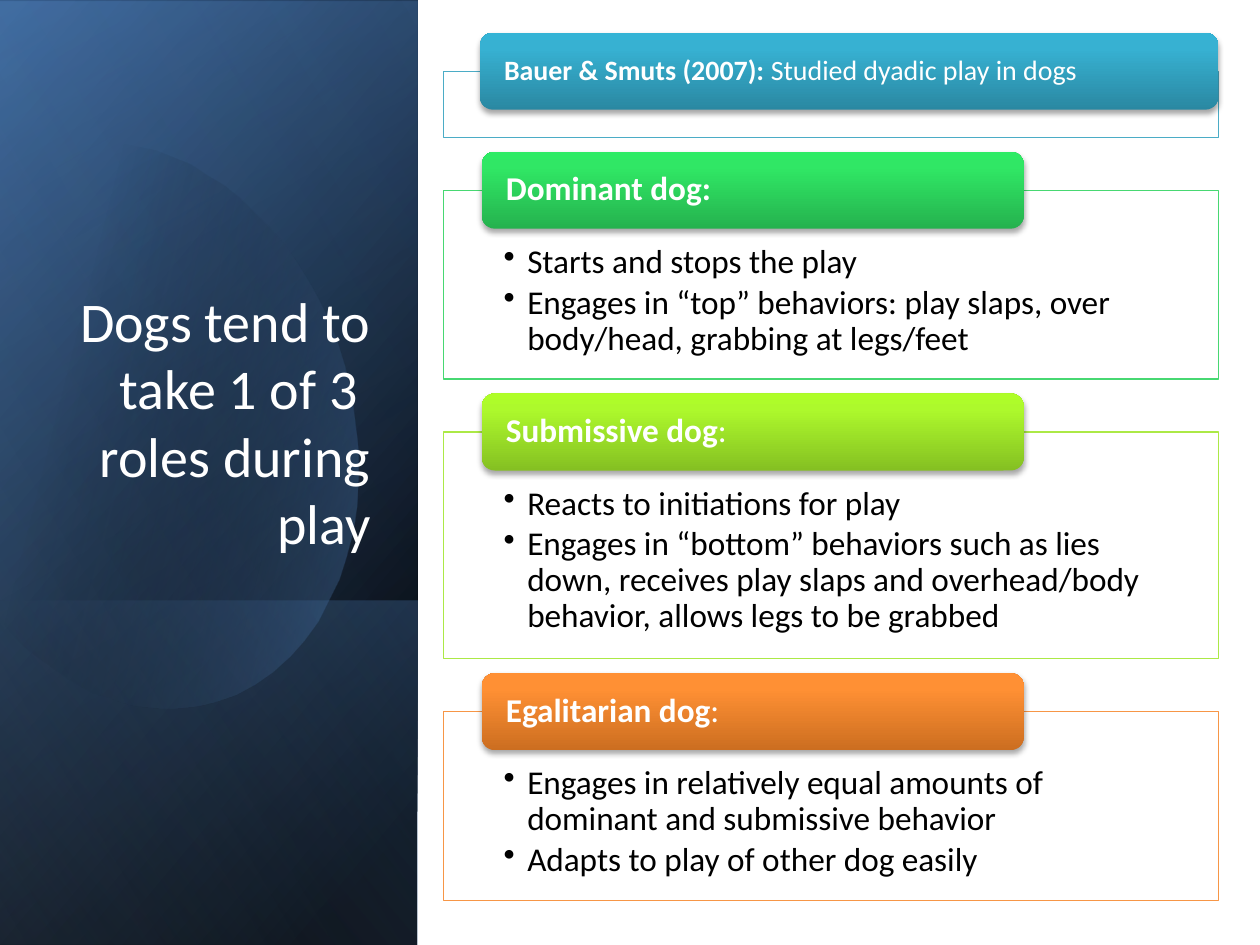
from lxml import etree
from pptx import Presentation
from pptx.dml.color import RGBColor
from pptx.enum.shapes import MSO_SHAPE
from pptx.enum.text import MSO_ANCHOR, MSO_AUTO_SIZE, PP_ALIGN
from pptx.oxml.ns import qn
from pptx.util import Pt

RECTANGLE, ROUNDED = MSO_SHAPE.RECTANGLE, MSO_SHAPE.ROUNDED_RECTANGLE
TOP, MIDDLE, BOTTOM = MSO_ANCHOR.TOP, MSO_ANCHOR.MIDDLE, MSO_ANCHOR.BOTTOM
LEFT, RIGHT = PP_ALIGN.LEFT, PP_ALIGN.RIGHT
FIXED_SIZE = MSO_AUTO_SIZE.NONE

COLORS = {
    "white": "FFFFFF", "black": "000000", "navy": "376092",
    "blue": "4F81BD", "pale": "95B3D7",
    "teal": "4BACC6", "green": "47D872", "lime": "ACE946", "orange": "F79646",
}
# Header gradients, from bottom to top
HEADER_STOPS = {
    "teal": [(0, "2A88A2"), (80, "37B1D2"), (100, "34B4D6")],
    "green": [(0, "25B24E"), (80, "30E765"), (100, "2DEB64")],
    "lime": [(0, "85C022"), (80, "ADF92C"), (100, "AFFE28")],
    "orange": [(0, "CC6E20"), (80, "FF9034"), (100, "FF9136")],
}


def bezier(start, control1, control2, end, steps=16):
    """Points along a cubic curve, without its start."""
    points = []
    for step in range(1, steps + 1):
        t = step / steps
        weights = ((1 - t) ** 3, 3 * t * (1 - t) ** 2, 3 * t * t * (1 - t), t ** 3)
        corners = (start, control1, control2, end)
        points.append(tuple(sum(w * c[axis] for w, c in zip(weights, corners))
                            for axis in (0, 1)))
    return points


class SlideBuilder:
    font = "Calibri"

    def __init__(self, slide):
        self.slide = slide

    def color(self, parent, value, alpha=100):
        node = etree.SubElement(parent, qn("a:srgbClr"), val=value)
        if alpha < 100:
            etree.SubElement(node, qn("a:alpha"), val=str(alpha * 1000))

    def gradient(self, shape, stops, angle):
        shape.fill.gradient()
        gradient = shape._element.spPr.find(qn("a:gradFill"))
        stop_list = gradient.find(qn("a:gsLst"))
        for old_stop in list(stop_list):
            stop_list.remove(old_stop)
        for position, *color in stops:
            stop = etree.SubElement(stop_list, qn("a:gs"), pos=str(position * 1000))
            self.color(stop, *color)
        gradient.find(qn("a:lin")).set("ang", str(angle * 60000))

    def shape(self, kind, left, top, width, height):
        shape = self.slide.shapes.add_shape(kind, Pt(left), Pt(top), Pt(width), Pt(height))
        shape.shadow.inherit = False
        shape.line.fill.background()
        return shape

    def backdrop(self, top, height, stops, angle, width=238.5):
        """A mirrored rectangle turned a quarter, given by its visible bounds."""
        shape = self.shape(RECTANGLE, (width - height) / 2, top + (height - width) / 2,
                           height, width)
        shape.rotation = 90
        shape._element.spPr.find(qn("a:xfrm")).set("flipH", "1")
        self.gradient(shape, stops, angle)

    def outline_shape(self, points, stops, angle):
        builder = self.slide.shapes.build_freeform(*points[0], scale=Pt(1))
        builder.add_line_segments(points[1:], close=True)
        shape = builder.convert_to_shape()
        shape.shadow.inherit = False
        shape.line.fill.background()
        self.gradient(shape, stops, angle)

    def frame_text(self, shape, anchor, left, top, right, bottom):
        frame = shape.text_frame
        frame.word_wrap, frame.vertical_anchor = True, anchor
        frame.margin_left, frame.margin_top = Pt(left), Pt(top)
        frame.margin_right, frame.margin_bottom = Pt(right), Pt(bottom)
        return frame

    def run(self, paragraph, text, size, color, bold=None):
        run = paragraph.add_run()
        run.text = text
        run.font.name, run.font.size, run.font.bold = self.font, Pt(size), bold
        run.font.color.rgb = RGBColor.from_string(COLORS[color])

    def title(self, lines, left, top, width, height):
        title = self.slide.shapes.title
        title.left, title.top = Pt(left), Pt(top)
        title.width, title.height = Pt(width), Pt(height)
        frame = self.frame_text(title, BOTTOM, 7.2, 3.6, 7.2, 3.6)
        frame.auto_size = FIXED_SIZE
        paragraph = frame.paragraphs[0]
        paragraph.alignment = RIGHT
        for index, line in enumerate(lines):
            if index:
                paragraph.add_line_break()
            self.run(paragraph, line, 32, "white")

    def panel(self, color, top, height, bullets, left=253.4, width=442.8, size=19):
        shape = self.shape(RECTANGLE, left, top, width, height)
        shape.fill.solid()
        shape.fill.fore_color.rgb = RGBColor.from_string(COLORS["white"])
        white = shape._element.spPr.find(qn("a:solidFill"))[0]
        etree.SubElement(white, qn("a:alpha"), val="90000")
        shape.line.color.rgb = RGBColor.from_string(COLORS[color])
        shape.line.width = Pt(0.75)
        frame = self.frame_text(shape, TOP, 34.4, 31, 34.4, 10.8)
        for index, text in enumerate(bullets):
            paragraph = frame.add_paragraph() if index else frame.paragraphs[0]
            paragraph.level, paragraph.alignment = 1, LEFT
            paragraph.line_spacing, paragraph.space_after = 0.9, Pt(0.15 * size)
            properties = paragraph._p.get_or_add_pPr()
            properties.set("marL", str(Pt(13.5)))
            properties.set("indent", str(Pt(-13.5)))
            etree.SubElement(properties, qn("a:buChar"), char="•")
            self.run(paragraph, text, size, "black")

    def header(self, color, left, top, width, size, runs, height=44):
        shape = self.shape(ROUNDED, left, top, width, height)
        self.gradient(shape, HEADER_STOPS[color], 270)
        effects = shape._element.spPr.find(qn("a:effectLst"))
        shadow = etree.SubElement(effects, qn("a:outerShdw"), blurRad=str(Pt(3.1)),
                                  dist=str(Pt(1.8)), dir="5400000", rotWithShape="0")
        self.color(shadow, COLORS["black"], 35)
        paragraph = self.frame_text(shape, MIDDLE, 11.6, 0, 11.6, 0).paragraphs[0]
        paragraph.alignment, paragraph.line_spacing = LEFT, 0.9
        for text, bold in runs:
            self.run(paragraph, text, size, "white", bold)


def main():
    presentation = Presentation()
    presentation.slide_width, presentation.slide_height = Pt(720), Pt(540)
    builder = SlideBuilder(presentation.slides.add_slide(presentation.slide_layouts[5]))
    black, navy = COLORS["black"], COLORS["navy"]
    blue, pale = COLORS["blue"], COLORS["pale"]

    # Layered backdrop on the left
    builder.backdrop(0, 540, [(8, black), (100, navy)], 50)
    builder.backdrop(1, 540, [(0, black, 0), (99, blue, 46)], 30)
    builder.backdrop(343, 197.3, [(2, blue, 29), (100, black, 30)], 130)
    outline = [(69, 82)]
    outline += bezier((69, 82), (123, 88), (176, 138), (197, 209))
    outline += bezier((197, 209), (221, 297), (189, 382), (123, 401))
    outline += bezier((123, 401), (82, 413), (38, 396), (5, 360))
    outline += [(-2, 351), (-18, 120), (-11, 111)]
    outline += bezier((-11, 111), (11, 90), (39, 79), (69, 82))
    builder.outline_shape(outline, [(29, black, 0), (100, blue, 43)], 14)
    builder.backdrop(0, 540, [(0, black, 0), (99, pale, 11)], 120)

    # Title; it goes in front of the backdrop
    builder.title(["Dogs tend to take 1 of 3 ", "roles during play"], 34.6, 132.5, 184.3, 188.6)
    title_element = builder.slide.shapes.title._element
    title_element.getparent().append(title_element)

    # Sections: color, panel height, header left, width, text size, header runs, bullets
    sections = [
        ("teal", 37.8, 274.3, 421.9, 16,
         [("Bauer & Smuts (2007): ", True), ("Studied dyadic play in dogs", False)], []),
        ("green", 108, 275.4, 309.6, 19, [("Dominant dog:", True)],
         ["Starts and stops the play",
          "Engages in “top” behaviors: play slaps, over body/head, grabbing at legs/feet"]),
        ("lime", 129.6, 275.4, 309.6, 19, [("Submissive dog", True), (":", False)],
         ["Reacts to initiations for play",
          "Engages in “bottom” behaviors such as lies down, receives play slaps and "
          "overhead/body behavior, allows legs to be grabbed"]),
        ("orange", 108, 275.4, 309.6, 19, [("Egalitarian dog", True), (":", False)],
         ["Engages in relatively equal amounts of dominant and submissive behavior",
          "Adapts to play of other dog easily"]),
    ]
    top, gap = 40.7, 30.2
    for color, height, left, width, size, runs, bullets in sections:
        builder.panel(color, top, height, bullets)
        builder.header(color, left, top - 22, width, size, runs)
        top += height + gap

    presentation.save("out.pptx")


if __name__ == "__main__":
    main()
